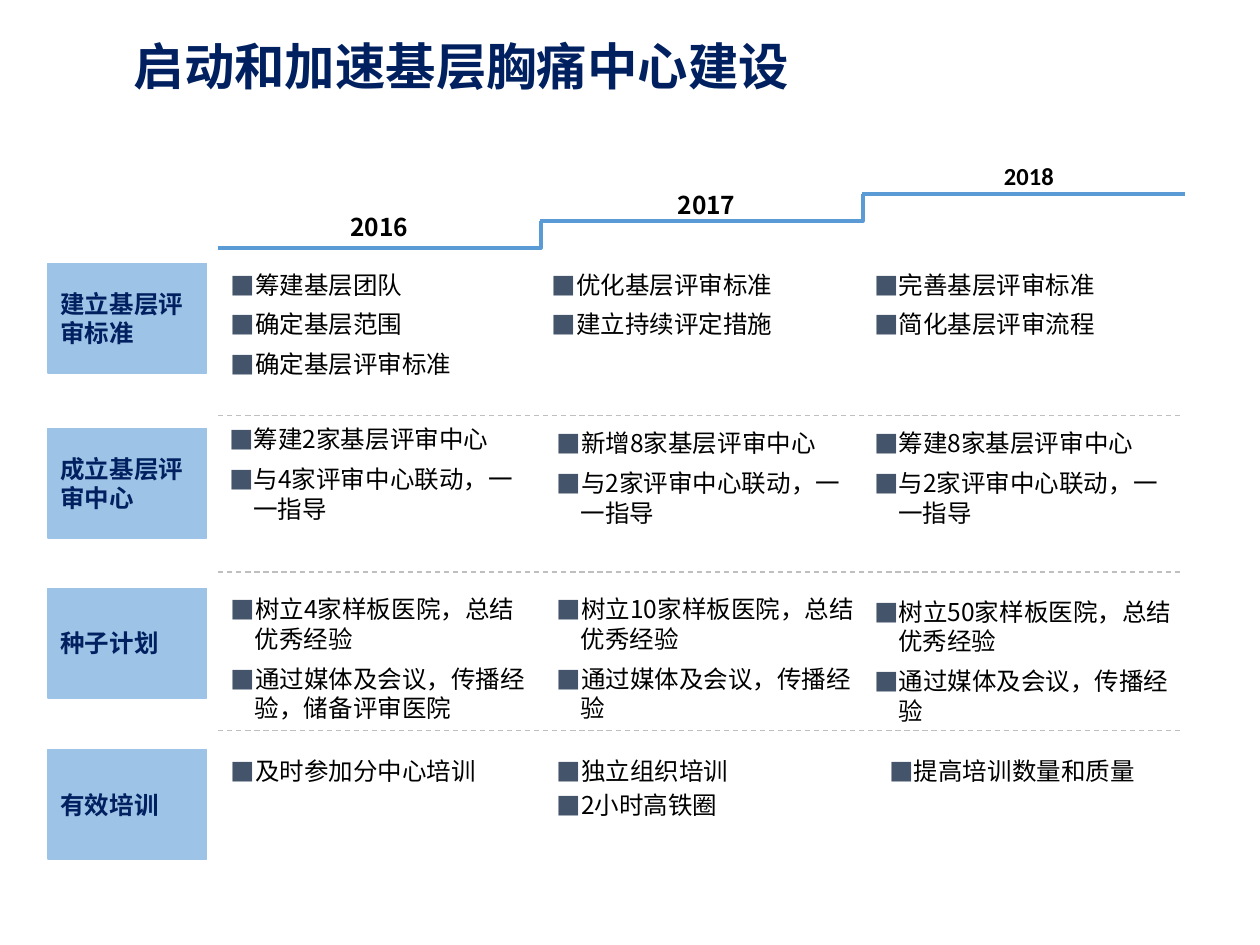
import pptx
import pptx.dml.color
import pptx.enum.dml
import pptx.enum.shapes
import pptx.enum.text
import pptx.util
from lxml import etree
from pptx.oxml.ns import qn

Cm = pptx.util.Cm
Pt = pptx.util.Pt
ANCHOR = pptx.enum.text.MSO_ANCHOR

CJK = "Noto Sans CJK SC"
NAVY, BLACK, SKY, STEP_BLUE = "002060", "000000", "9DC3E6", "5B9BD5"
BULLET, DIVIDER = "44546A", "BFBFBF"

COLUMN_LEFT, COLUMN_PITCH, COLUMN_WIDTH = 4.4, 6.49, 6.5
GRID_RIGHT = 23.85
STEP_LEVELS = [5.0, 4.46, 3.91]
YEARS = [("2016", 6.81, 4.14, CJK), ("2017", 13.41, 3.71, CJK),
         ("2018", 19.99, 3.12, "Calibri")]
DIVIDERS = [8.38, 11.53, 14.73]

# Each row: label, label top, paragraph gap, then (left, top, height, items) per year
ROWS = [
    ("建立基层评审标准", 5.31, 6, [
        (4.4, 5.31, 2.49, ["筹建基层团队", "确定基层范围", "确定基层评审标准"]),
        (10.87, 5.31, 1.68, ["优化基层评审标准", "建立持续评定措施"]),
        (17.37, 5.31, 1.68, ["完善基层评审标准", "简化基层评审流程"]),
    ]),
    ("成立基层评审中心", 8.64, 6, [
        (4.37, 8.43, 2.26, ["筹建2家基层评审中心", "与4家评审中心联动，一一指导"]),
        (10.97, 8.51, 2.26, ["新增8家基层评审中心", "与2家评审中心联动，一一指导"]),
        (17.37, 8.51, 2.26, ["筹建8家基层评审中心", "与2家评审中心联动，一一指导"]),
    ]),
    ("种子计划", 11.86, 6, [
        (4.4, 11.86, 2.87, ["树立4家样板医院，总结优秀经验",
                            "通过媒体及会议，传播经验，储备评审医院"]),
        (10.97, 11.86, 2.87, ["树立10家样板医院，总结优秀经验", "通过媒体及会议，传播经验"]),
        (17.37, 11.91, 2.87, ["树立50家样板医院，总结优秀经验", "通过媒体及会议，传播经验"]),
    ]),
    ("有效培训", 15.11, 3, [
        (4.4, 15.11, 0.86, ["及时参加分中心培训"]),
        (10.97, 15.11, 1.55, ["独立组织培训", "2小时高铁圈"]),
        (17.68, 15.11, 0.86, ["提高培训数量和质量"]),
    ]),
]


def rgb(hex_value):
    return pptx.dml.color.RGBColor.from_string(hex_value)


class RoadmapSlide:
    def __init__(self, slide):
        self.slide = slide
        self.shapes = slide.shapes

    def style(self, paragraph, size=14, color=BLACK, bold=False, name=CJK):
        paragraph.alignment = pptx.enum.text.PP_ALIGN.LEFT
        font = paragraph.font
        font.size, font.bold, font.name = Pt(size), bold, name
        font.color.rgb = rgb(color)
        east_asian = etree.SubElement(paragraph._p.pPr.find(qn("a:defRPr")), qn("a:ea"))
        east_asian.set("typeface", CJK)

    def add_bullet(self, paragraph):
        properties = paragraph._p.get_or_add_pPr()
        properties.set("marL", str(Cm(0.49)))
        properties.set("indent", str(-Cm(0.49)))
        color = etree.SubElement(properties, qn("a:buClr"))
        etree.SubElement(color, qn("a:srgbClr")).set("val", BULLET)
        etree.SubElement(properties, qn("a:buFont")).set("typeface", CJK)
        etree.SubElement(properties, qn("a:buChar")).set("char", "■")

    def title(self, text):
        heading = self.shapes.title
        heading.left, heading.top = Cm(2.44), Cm(0.69)
        heading.width, heading.height = Cm(23.37), Cm(1.42)
        frame = heading.text_frame
        frame.text = text
        frame.auto_size = pptx.enum.text.MSO_AUTO_SIZE.NONE
        frame.vertical_anchor = ANCHOR.MIDDLE
        frame.paragraphs[0].line_spacing = 0.9
        self.style(frame.paragraphs[0], 28.8, NAVY, True)

    def step(self, points):
        (start_x, start_y), *others = [(Cm(x), Cm(y)) for x, y in points]
        builder = self.shapes.build_freeform(start_x, start_y)
        builder.add_line_segments(others, close=False)
        outline = builder.convert_to_shape()
        outline.shadow.inherit = False
        outline.fill.background()
        outline.line.color.rgb = rgb(STEP_BLUE)
        outline.line.width = Pt(2.25)

    def year(self, text, left, top, font_name):
        box = self.shapes.add_textbox(Cm(left), Cm(top), Cm(2.18), Cm(0.86))
        box.text_frame.word_wrap = True
        box.text_frame.text = text
        self.style(box.text_frame.paragraphs[0], bold=True, name=font_name)

    def label(self, text, top):
        block = self.shapes.add_shape(pptx.enum.shapes.MSO_SHAPE.RECTANGLE,
                                      Cm(0.97), Cm(top), Cm(3.2), Cm(2.21))
        block.shadow.inherit = False
        block.fill.solid()
        block.fill.fore_color.rgb = rgb(SKY)
        block.line.color.rgb = rgb(SKY)
        block.line.width = Pt(0.75)
        block.text_frame.word_wrap = True
        block.text_frame.vertical_anchor = ANCHOR.MIDDLE
        block.text_frame.text = text
        self.style(block.text_frame.paragraphs[0], color=NAVY, bold=True)

    def bullets(self, left, top, height, items, gap):
        box = self.shapes.add_textbox(Cm(left), Cm(top), Cm(COLUMN_WIDTH), Cm(height))
        frame = box.text_frame
        frame.word_wrap = True
        for index, item in enumerate(items):
            paragraph = frame.add_paragraph() if index else frame.paragraphs[0]
            paragraph.text = item
            self.add_bullet(paragraph)
            if index:
                paragraph.space_before = Pt(gap)
            self.style(paragraph)

    def divider(self, y):
        rule = self.shapes.add_connector(pptx.enum.shapes.MSO_CONNECTOR.STRAIGHT,
                                         Cm(COLUMN_LEFT), Cm(y), Cm(GRID_RIGHT), Cm(y))
        rule.line.color.rgb = rgb(DIVIDER)
        rule.line.width = Pt(0.75)
        rule.line.dash_style = pptx.enum.dml.MSO_LINE.DASH
        etree.SubElement(rule._element.spPr, qn("a:effectLst"))


def main():
    deck = pptx.Presentation()
    deck.slide_width, deck.slide_height = Cm(25.4), Cm(19.05)
    roadmap = RoadmapSlide(deck.slides.add_slide(deck.slide_layouts[5]))

    roadmap.title("启动和加速基层胸痛中心建设")
    for index, level in enumerate(STEP_LEVELS):
        left = COLUMN_LEFT + index * COLUMN_PITCH
        right = left + COLUMN_WIDTH
        riser = [(right, upper) for upper in STEP_LEVELS[index + 1:index + 2]]
        roadmap.step([(left, level), (right, level)] + riser)
    for year in YEARS:
        roadmap.year(*year)
    for y in DIVIDERS:
        roadmap.divider(y)
    for label, top, gap, cells in ROWS:
        roadmap.label(label, top)
        for cell in cells:
            roadmap.bullets(*cell, gap)

    deck.save("out.pptx")


if __name__ == "__main__":
    main()
